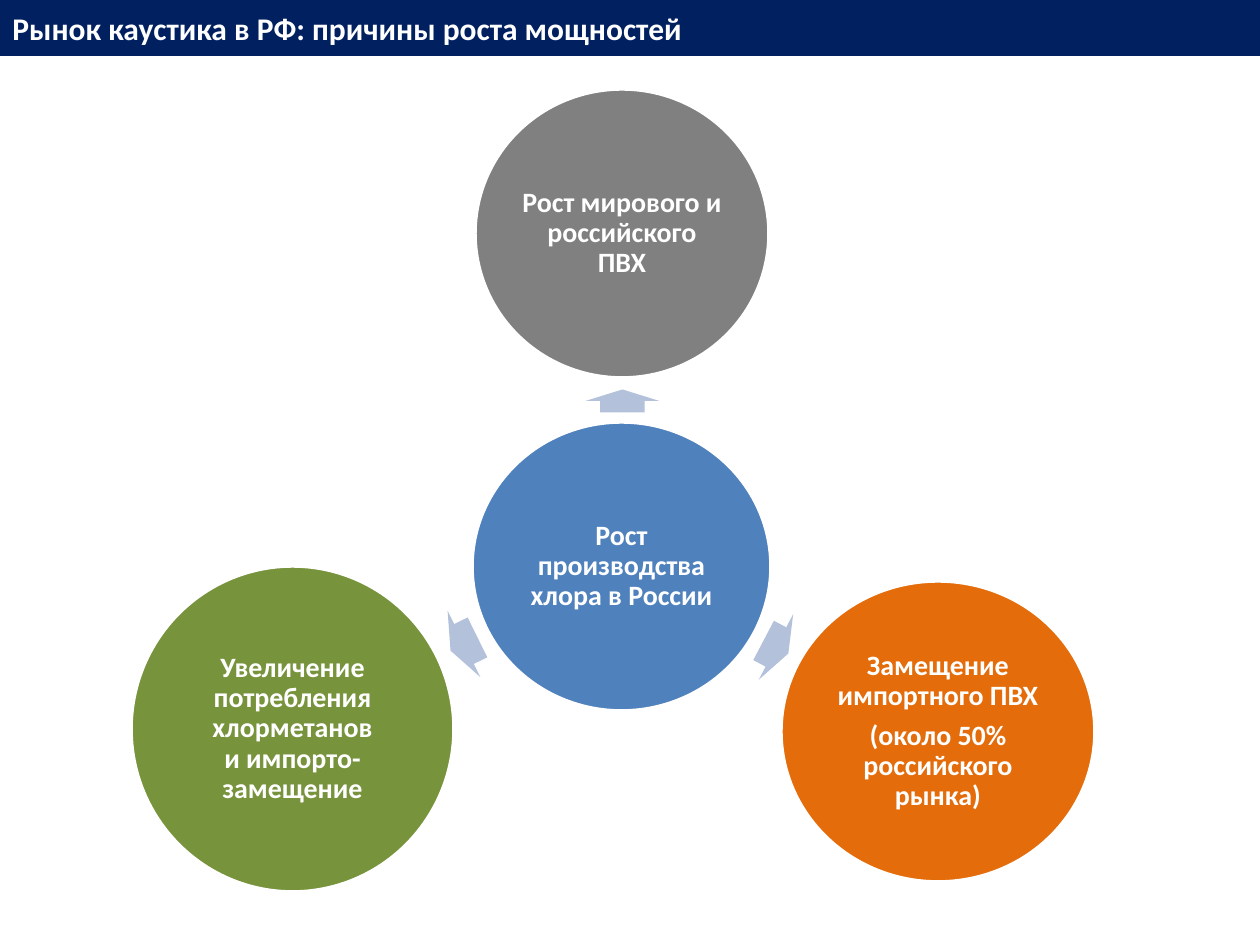
"""Build a slide on why caustic soda capacity grows in Russia."""
from dataclasses import dataclass

from pptx import Presentation
from pptx.dml.color import RGBColor
from pptx.enum.shapes import MSO_SHAPE
from pptx.enum.text import MSO_ANCHOR, PP_ALIGN
from pptx.util import Pt

SCALE = 914400 / 126
FONT = "Calibri"
INK = {
    "navy": "002060",
    "white": "FFFFFF",
    "blue": "4F81BD",
    "grey": "808080",
    "orange": "E46C0A",
    "green": "77933C",
    "pale": "B3C1DB",
}


@dataclass
class Box:
    left: int
    top: int
    width: int
    height: int


@dataclass
class Disc:
    box: Box
    fill: str
    lines: list[str]
    after: float = 5.6


@dataclass
class Arrow:
    box: Box
    turn: float


TITLE = "Рынок каустика в РФ: причины роста мощностей"
DISCS = [
    Disc(Box(472, 422, 299, 289), "blue", ["Рост производства хлора в России"]),
    Disc(Box(475, 89, 294, 289), "grey", ["Рост мирового и российского ПВХ"]),
    Disc(Box(781, 581, 314, 301), "orange",
         ["Замещение импортного ПВХ", "(около 50% российского рынка)"]),
    Disc(Box(131, 566, 323, 326), "green",
         ["Увеличение потребления хлорметанов", "и импорто-", "замещение"], 0),
]
ARROWS = [
    Arrow(Box(611, 364, 23, 74), 270),
    Arrow(Box(762, 610, 28, 74), 27.7),
    Arrow(Box(449, 607, 30, 74), 153.7),
]


def px(size: int) -> int:
    """Turn px into EMU."""
    return round(size * SCALE)


def tint(name: str) -> RGBColor:
    """Look up a colour by name."""
    return RGBColor.from_string(INK[name])


def add_shape(slide, kind, box: Box, fill: str):
    """Add a flat filled shape with no outline."""
    shape = slide.shapes.add_shape(
        kind, px(box.left), px(box.top), px(box.width), px(box.height))
    shape.shadow.inherit = False
    shape.fill.solid()
    shape.fill.fore_color.rgb = tint(fill)
    shape.line.fill.background()
    return shape


def set_line(shape, name: str, width: float) -> None:
    """Outline a shape."""
    shape.line.color.rgb = tint(name)
    shape.line.width = Pt(width)


def add_text(shape, lines: list[str], size: int, align) -> None:
    """Write bold white paragraphs, centred in height."""
    frame = shape.text_frame
    frame.word_wrap = True
    frame.vertical_anchor = MSO_ANCHOR.MIDDLE
    for index, line in enumerate(lines):
        para = frame.add_paragraph() if index else frame.paragraphs[0]
        para.alignment = align
        run = para.add_run()
        run.text = line
        run.font.name = FONT
        run.font.size = Pt(size)
        run.font.bold = True
        run.font.color.rgb = tint("white")


def add_disc(slide, disc: Disc) -> None:
    """Draw a circle with its label."""
    shape = add_shape(slide, MSO_SHAPE.OVAL, disc.box, disc.fill)
    set_line(shape, "white", 2)
    add_text(shape, disc.lines, 16, PP_ALIGN.CENTER)
    frame = shape.text_frame
    frame.margin_left = frame.margin_right = px(3)
    frame.margin_top = frame.margin_bottom = px(3)
    for para in frame.paragraphs:
        para.line_spacing = 0.9
        para.space_after = Pt(disc.after)


def add_arrow(slide, arrow: Arrow) -> None:
    """Draw a turned block arrow."""
    shape = add_shape(slide, MSO_SHAPE.RIGHT_ARROW, arrow.box, "pale")
    shape.adjustments[0] = 0.6
    shape.adjustments[1] = 0.5
    shape.rotation = arrow.turn


def main() -> None:
    """Build and save the slide."""
    deck = Presentation()
    deck.slide_width, deck.slide_height = px(1260), px(945)
    slide = deck.slides.add_slide(deck.slide_layouts[6])
    title = add_shape(slide, MSO_SHAPE.RECTANGLE, Box(0, 0, 1260, 55), "navy")
    set_line(title, "navy", 0.75)
    add_text(title, [TITLE], 18, PP_ALIGN.LEFT)
    for disc in DISCS:
        add_disc(slide, disc)
    for arrow in ARROWS:
        add_arrow(slide, arrow)
    deck.save("out.pptx")


if __name__ == "__main__":
    main()
